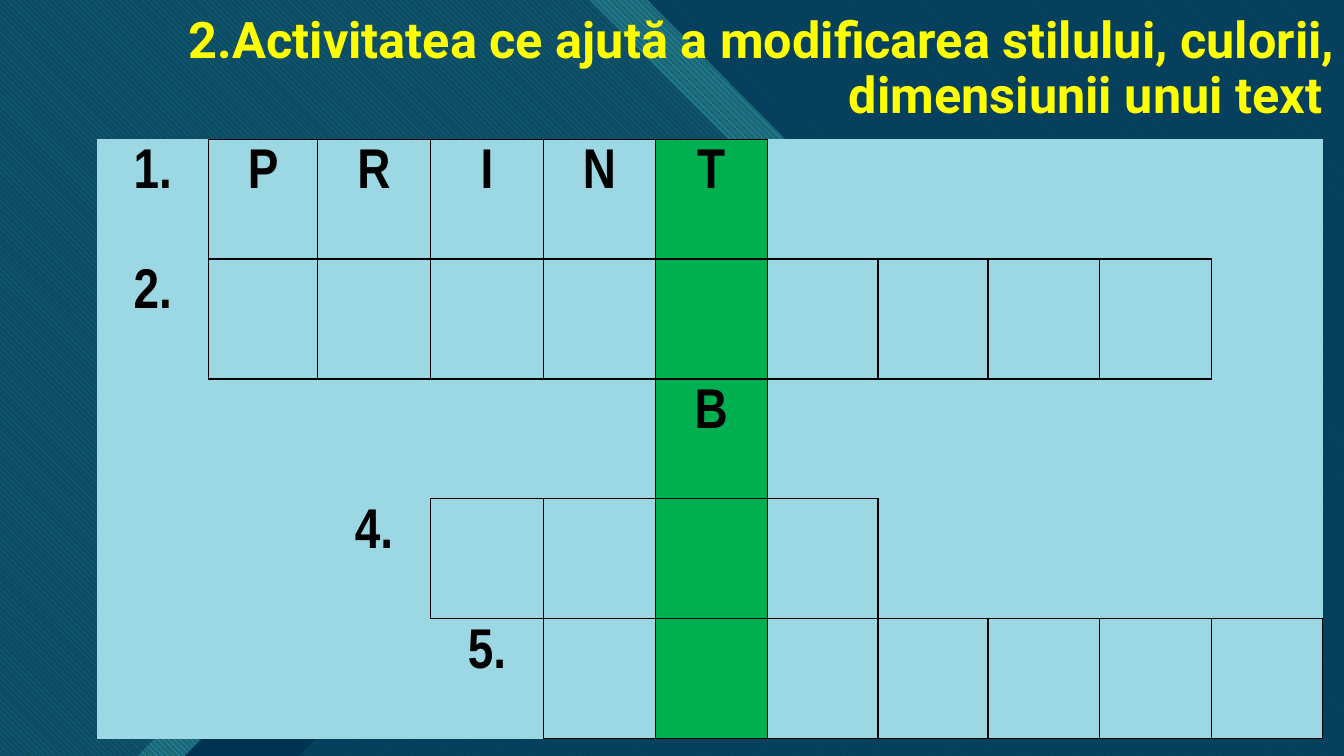
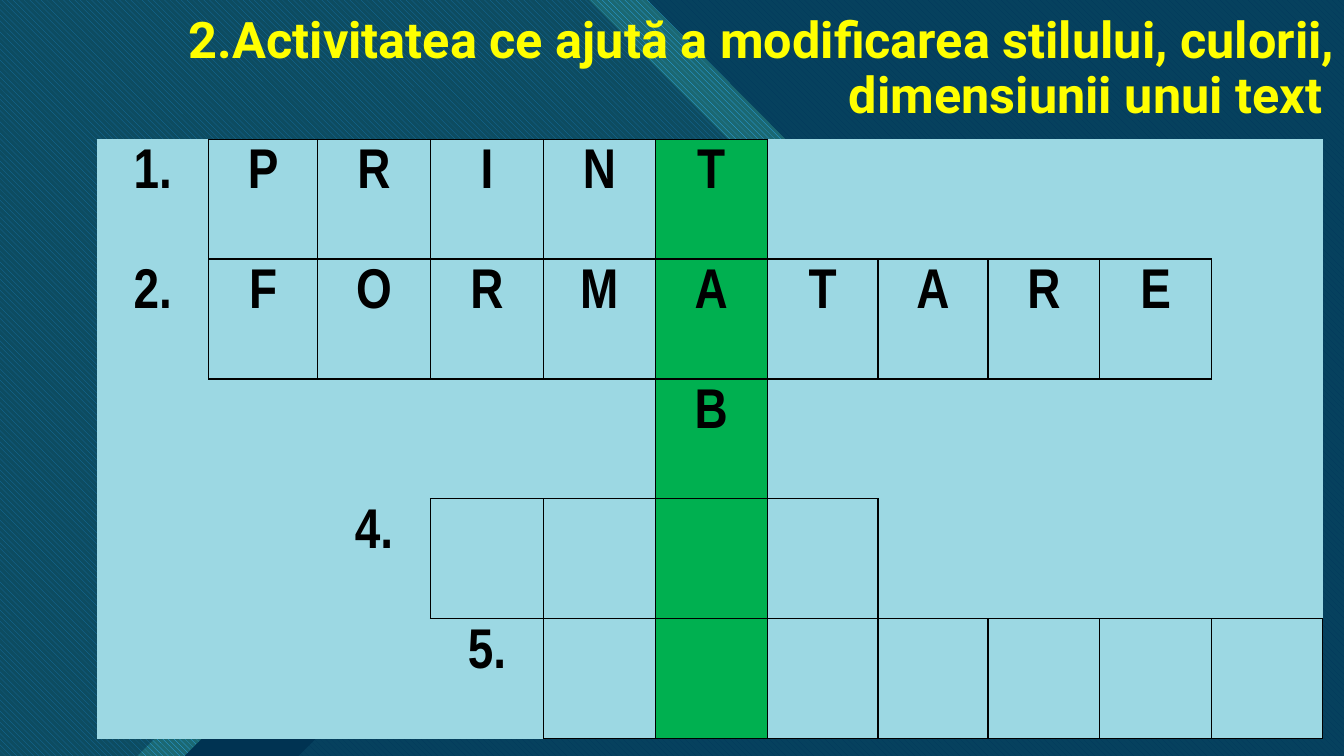
from lxml.etree import SubElement
from pptx import Presentation
from pptx.dml.color import RGBColor
from pptx.enum.dml import MSO_PATTERN
from pptx.enum.text import MSO_ANCHOR, PP_ALIGN
from pptx.oxml.ns import qn
from pptx.util import Inches, Pt

TITLE = "2.Activitatea ce ajută a modificarea stilului, culorii, dimensiunii unui text "
COL_WIDTHS = [1.11, 1.08, 1.12, 1.12, 1.11, 1.11, 1.1, 1.09, 1.11, 1.11, 1.1]
ROW_HEIGHT = 1.19
KEY_COL = 5

RIGHT_PANEL = [(4.23, 0), (13.33, 0), (13.33, 7.5), (0, 7.5), (0, 3.63),
               (2.22, 1.41), (2.82, 1.41)]
SHADOW_BAND = [(0.21, 0.9), (6.64, 0.9), (8.1, 2.36), (2.96, 7.5), (0.21, 7.5)]
LIGHT_BAND = [(0, 0), (6.42, 0), (7.87, 1.46), (1.83, 7.5), (0, 7.5)]
LEFT_PANEL = [(0, 0), (5.84, 0), (7.35, 1.51), (1.36, 7.5), (0, 7.5)]


def rgb(color):
    return RGBColor.from_string(color)


class Deck:
    NAVY = "003352"
    BLUE = "0065A4"
    SKY = "2FAFFF"
    TEAL = "1B6872"
    CYAN = "47C3D3"
    PALE = "9CD8E3"
    GREEN = "00B050"
    YELLOW = "FFFF00"
    BLACK = "000000"

    def __init__(self):
        self.prs = Presentation()
        self.prs.slide_width = Inches(13.33)
        self.prs.slide_height = Inches(7.5)
        self.s = None

    def add_slide(self):
        self.s = self.prs.slides.add_slide(self.prs.slide_layouts[6])
        fill = self.s.background.fill
        fill.solid()
        fill.fore_color.rgb = rgb(self.BLUE)
        self.hatched(RIGHT_PANEL, self.BLUE, self.CYAN)
        self.solid(RIGHT_PANEL, self.NAVY, 90)
        self.solid(SHADOW_BAND, self.NAVY)
        self.hatched(LIGHT_BAND, self.SKY, self.TEAL)
        self.solid(LEFT_PANEL, self.NAVY, 51)

    def outline(self, points):
        start, *rest = [(Inches(x), Inches(y)) for x, y in points]
        builder = self.s.shapes.build_freeform(*start)
        builder.add_line_segments(rest, close=True)
        sp = builder.convert_to_shape()
        sp.shadow.inherit = False
        sp.line.fill.background()
        return sp

    def solid(self, points, color, opacity=100):
        sp = self.outline(points)
        sp.fill.solid()
        sp.fill.fore_color.rgb = rgb(color)
        if opacity < 100:
            clr = sp._element.spPr.find(qn("a:solidFill"))[0]
            SubElement(clr, qn("a:alpha"), val=str(opacity * 1000))

    def hatched(self, points, fore, back):
        fill = self.outline(points).fill
        fill.patterned()
        fill.pattern = MSO_PATTERN.WIDE_DOWNWARD_DIAGONAL
        fill.fore_color.rgb = rgb(fore)
        fill.back_color.rgb = rgb(back)

    def text(self, p, text, size, font, color, align, spacing):
        p.text = text
        p.alignment = align
        p.line_spacing = spacing
        p.font.size = Pt(size)
        p.font.name = font
        p.font.bold = True
        p.font.color.rgb = rgb(color)

    def title(self, text):
        box = self.s.shapes.add_textbox(Inches(0.4), 0, Inches(12.94), Inches(1.38))
        tf = box.text_frame
        tf.word_wrap = True
        tf.vertical_anchor = MSO_ANCHOR.MIDDLE
        self.text(tf.paragraphs[0], text, 36, "Roboto", self.YELLOW, PP_ALIGN.RIGHT, 0.9)

    def border(self, cell, side, visible):
        tcPr = cell._tc.get_or_add_tcPr()
        ln = SubElement(tcPr, qn(f"a:ln{side}"), w=str(Pt(1)))
        if visible:
            fill = SubElement(ln, qn("a:solidFill"))
            SubElement(fill, qn("a:srgbClr"), val=self.BLACK)
        else:
            SubElement(ln, qn("a:noFill"))

    def crossword(self, entries):
        letters, boxes = {}, set()
        for row, (number, start, length, word) in enumerate(entries):
            boxes.update((row, start + i) for i in range(length))
            letters.update({(row, start + i): c for i, c in enumerate(word)})
            letters[row, start - 1] = number

        table = self.s.shapes.add_table(
            len(entries), len(COL_WIDTHS), Inches(0.96), Inches(1.38),
            Inches(sum(COL_WIDTHS)), Inches(ROW_HEIGHT * len(entries))).table
        table.first_row = table.horz_banding = False
        for col, width in zip(table.columns, COL_WIDTHS):
            col.width = Inches(width)
        for row in table.rows:
            row.height = Inches(ROW_HEIGHT)

        for r in range(len(entries)):
            for c in range(len(COL_WIDTHS)):
                cell = table.cell(r, c)
                cell.margin_left = cell.margin_right = Inches(0.07)
                neighbours = {"L": (r, c - 1), "R": (r, c + 1),
                              "T": (r - 1, c), "B": (r + 1, c)}
                for side, other in neighbours.items():
                    self.border(cell, side, (r, c) in boxes or other in boxes)
                in_key = c == KEY_COL and (r, c) in boxes
                cell.fill.solid()
                cell.fill.fore_color.rgb = rgb(self.GREEN if in_key else self.PALE)
                if letters.get((r, c)):
                    self.text(cell.text_frame.paragraphs[0], letters[r, c], 40,
                              "Arial Narrow", self.BLACK, PP_ALIGN.CENTER, 1.07)


def main():
    deck = Deck()
    for answer in ("", "FORMATARE"):
        deck.add_slide()
        deck.crossword([
            ("1.", 1, 5, "PRINT"),
            ("2.", 1, 9, answer),
            ("", 5, 1, "B"),
            ("4.", 3, 4, ""),
            ("5.", 4, 7, ""),
        ])
        deck.title(TITLE)
    deck.prs.save("out.pptx")


if __name__ == "__main__":
    main()
